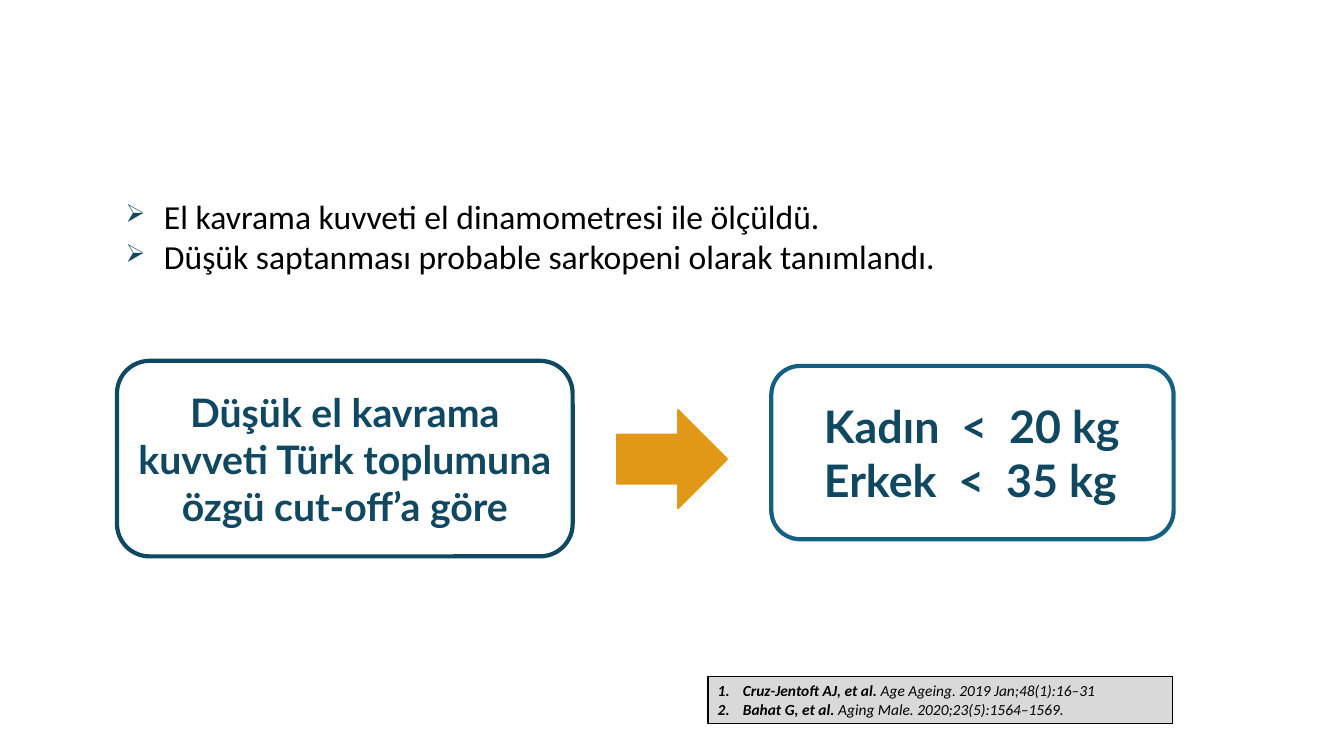
import pptx
import pptx.util
import pptx.dml.color
import pptx.enum.shapes
import pptx.enum.text
import pptx.oxml
import pptx.oxml.ns

Inches, Pt = pptx.util.Inches, pptx.util.Pt
RGBColor = pptx.dml.color.RGBColor
MSO_SHAPE = pptx.enum.shapes.MSO_SHAPE
PP_ALIGN = pptx.enum.text.PP_ALIGN
MSO_ANCHOR = pptx.enum.text.MSO_ANCHOR

WHITE = RGBColor(0xFF, 0xFF, 0xFF)
BLACK = RGBColor(0x00, 0x00, 0x00)
NAVY = RGBColor(0x10, 0x48, 0x62)
TEAL = RGBColor(0x15, 0x60, 0x82)
AMBER = RGBColor(0xE0, 0x98, 0x16)
GREY = RGBColor(0xD9, 0xD9, 0xD9)

ARROW = (f'<a:buClr><a:srgbClr val="{NAVY}"/></a:buClr>',
         '<a:buSzPct val="75000"/>', '<a:buChar char="➢"/>')
NUMBER = ('<a:buFont typeface="+mj-lt"/>', '<a:buAutoNum type="arabicPeriod"/>')

deck = pptx.Presentation()
deck.slide_width, deck.slide_height = Inches(13.33), Inches(7.5)
slide = deck.slides.add_slide(deck.slide_layouts[6])


def add_box(kind, place, fill, edge, width):
    box = slide.shapes.add_shape(kind, *[Inches(n) for n in place])
    box.shadow.inherit = False
    box.fill.solid()
    box.fill.fore_color.rgb = fill
    box.line.color.rgb = edge
    box.line.width = Pt(width)
    return box


def add_text(box, lines, font, size, color, align=PP_ALIGN.LEFT,
             left=0, hang=0, bullet=()):
    """Each line is a list of (text, bold, italic) runs."""
    frame = box.text_frame
    frame.word_wrap = True
    frame.vertical_anchor = MSO_ANCHOR.MIDDLE
    for i, line in enumerate(lines):
        para = frame.add_paragraph() if i else frame.paragraphs[0]
        para.alignment = align
        props = para._p.get_or_add_pPr()
        props.set("marL", str(Inches(left)))
        props.set("indent", str(Inches(-hang)))
        for tag in bullet:
            space = pptx.oxml.ns.nsdecls("a")
            props.append(pptx.oxml.parse_xml(
                tag.replace(" ", f" {space} ", 1) if not tag.startswith("<a:buClr")
                else tag.replace("<a:buClr>", f"<a:buClr {space}>")))
        for text, bold, italic in line:
            run = para.add_run()
            run.text = text
            run.font.name = font
            run.font.size = Pt(size)
            run.font.bold = bold
            run.font.italic = italic
            run.font.color.rgb = color


# Criterion on the left
rule = add_box(MSO_SHAPE.ROUNDED_RECTANGLE, (1.16, 3.58, 4.52, 1.94), WHITE, NAVY, 3)
add_text(rule, [[("Düşük el kavrama kuvveti Türk toplumuna özgü cut-off’a göre", True, False)]],
         "Lato", 28, NAVY, PP_ALIGN.CENTER)

# Limits on the right
limits = add_box(MSO_SHAPE.ROUNDED_RECTANGLE, (7.65, 3.63, 3.99, 1.72), WHITE, TEAL, 3)
add_text(limits, [[("Kadın  <  20 kg", True, False)], [("Erkek  <  35 kg", True, False)]],
         "Lato", 32, NAVY, left=0.34)

# Arrow between them
add_box(MSO_SHAPE.RIGHT_ARROW, (6.12, 4.07, 1.09, 0.97), AMBER, AMBER, 1.5)

# Method statements
method = add_box(MSO_SHAPE.ROUNDED_RECTANGLE, (1.07, 1.54, 10.76, 1.61), WHITE, WHITE, 3)
add_text(method, [[("El kavrama kuvveti el dinamometresi ile ölçüldü.", False, False)],
                  [("Düşük saptanması probable sarkopeni olarak tanımlandı.", False, False)]],
         "Calibri", 24, BLACK, left=0.38, hang=0.38, bullet=ARROW)

# References
refs = add_box(MSO_SHAPE.RECTANGLE, (7.02, 6.71, 4.61, 0.47), GREY, BLACK, 1)
add_text(refs, [[("Cruz-Jentoft AJ, et al.", True, True),
                 (" Age Ageing. 2019 Jan;48(1):16–31", False, True)],
                [("Bahat G, et al. ", True, True),
                 ("Aging Male. 2020;23(5):1564–1569.", False, True)]],
         "Calibri", 11, BLACK, left=0.25, hang=0.25, bullet=NUMBER)

deck.save("out.pptx")
